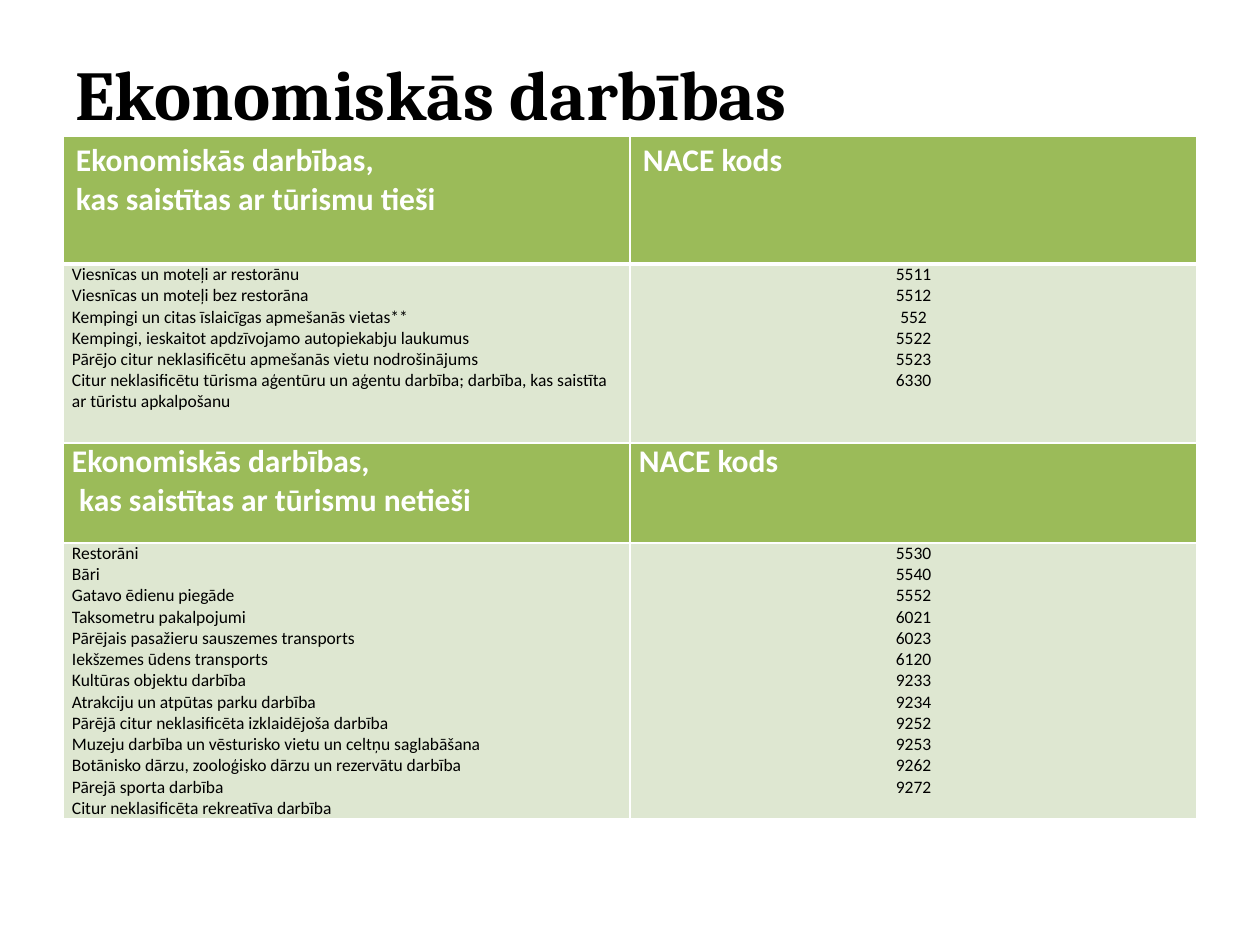
"""Builds the slide listing tourism activities with their NACE codes."""
from lxml.etree import SubElement
from pptx import Presentation
from pptx.dml.color import RGBColor
from pptx.enum.text import MSO_ANCHOR as Anchor, PP_ALIGN as Align
from pptx.oxml.ns import qn
from pptx.util import Pt

EMU_PER_PX = 914400 / 126
COLORS = {"ink": "000000", "paper": "FFFFFF", "green": "9BBB59", "pale": "DEE7D1"}

DIRECT = [
    ("Viesnīcas un moteļi ar restorānu", "5511"),
    ("Viesnīcas un moteļi bez restorāna", "5512"),
    ("Kempingi un citas īslaicīgas apmešanās vietas**", "552"),
    ("Kempingi, ieskaitot apdzīvojamo autopiekabju laukumus", "5522"),
    ("Pārējo citur neklasificētu apmešanās vietu nodrošinājums", "5523"),
    ("Citur neklasificētu tūrisma aģentūru un aģentu darbība; "
     "darbība, kas saistīta ar tūristu apkalpošanu", "6330"),
]
INDIRECT = [
    ("Restorāni", "5530"),
    ("Bāri", "5540"),
    ("Gatavo ēdienu piegāde", "5552"),
    ("Taksometru pakalpojumi", "6021"),
    ("Pārējais pasažieru sauszemes transports", "6023"),
    ("Iekšzemes ūdens transports", "6120"),
    ("Kultūras objektu darbība", "9233"),
    ("Atrakciju un atpūtas parku darbība", "9234"),
    ("Pārējā citur neklasificēta izklaidējoša darbība", "9252"),
    ("Muzeju darbība un vēsturisko vietu un celtņu saglabāšana", "9253"),
    ("Botānisko dārzu, zooloģisko dārzu un rezervātu darbība", "9262"),
    ("Pārejā sporta darbība", "9272"),
    ("Citur neklasificēta rekreatīva darbība", None),
]


def px(length):
    return round(length * EMU_PER_PX)


def rgb(name):
    return RGBColor.from_string(COLORS[name])


def write(frame, lines, size, font="Calibri", color="ink", bold=False, align=Align.LEFT):
    for index, line in enumerate(lines):
        paragraph = frame.add_paragraph() if index else frame.paragraphs[0]
        paragraph.alignment = align
        run = paragraph.add_run()
        run.text = line
        run.font.name, run.font.size, run.font.bold = font, Pt(size), bold
        run.font.color.rgb = rgb(color)


class Deck:
    """Holds the table style and the current slide."""

    heading = {"size": 18, "color": "paper", "bold": True}
    body = {"size": 10}

    def __init__(self, width, height):
        self.show = Presentation()
        self.show.slide_width, self.show.slide_height = px(width), px(height)
        self.slide = self.show.slides.add_slide(self.show.slide_layouts[6])

    def title(self, text, left, top, width, height):
        frame = self.slide.shapes.add_textbox(px(left), px(top), px(width), px(height)).text_frame
        frame.word_wrap = True
        frame.vertical_anchor = Anchor.MIDDLE
        write(frame, [text], 40, font="Cambria", bold=True)

    def cell(self, cell, lines, fill, margins, top_rule=1, bottom_rule=1, **style):
        side, top = margins
        cell.margin_left = cell.margin_right = px(side)
        cell.margin_top = cell.margin_bottom = px(top)
        properties = cell._tc.get_or_add_tcPr()
        for edge, points in zip("LRTB", (1, 1, top_rule, bottom_rule)):
            line = SubElement(properties, qn(f"a:ln{edge}"), w=str(Pt(points)))
            paint = SubElement(line, qn("a:solidFill"))
            SubElement(paint, qn("a:srgbClr"), val=COLORS["paper"])
        cell.fill.solid()
        cell.fill.fore_color.rgb = rgb(fill)
        write(cell.text_frame, lines, **style)

    def table(self, sections, heights, left, top, width):
        table = self.slide.shapes.add_table(
            len(heights), 2, px(left), px(top), px(width), px(sum(heights))).table
        table.horz_banding = False
        for row, height in zip(table.rows, heights):
            row.height = px(height)
        for index, (heading, activities) in enumerate(sections):
            first = index == 0
            head, rest = 2 * index, 2 * index + 1
            rule = 3 if first else 1
            names = [name for name, _ in activities]
            codes = [code for _, code in activities if code]
            columns = [(heading, names, Align.LEFT), (["NACE kods"], codes, Align.CENTER)]
            for column, (label, entries, align) in enumerate(columns):
                self.cell(table.cell(head, column), label, "green",
                          (13, 6) if first else (9, 0), bottom_rule=rule, **self.heading)
                self.cell(table.cell(rest, column), entries, "pale", (9, 0),
                          top_rule=rule, align=align, **self.body)


def main():
    deck = Deck(1260, 945)
    deck.title("Ekonomiskās darbības", 63, 38, 1134, 110)
    deck.table(
        [(["Ekonomiskās darbības,", "kas saistītas ar tūrismu tieši"], DIRECT),
         (["Ekonomiskās darbības,", " kas saistītas ar tūrismu netieši"], INDIRECT)],
        heights=[128, 179, 100, 276], left=63, top=136, width=1134)
    deck.show.save("out.pptx")


if __name__ == "__main__":
    main()
